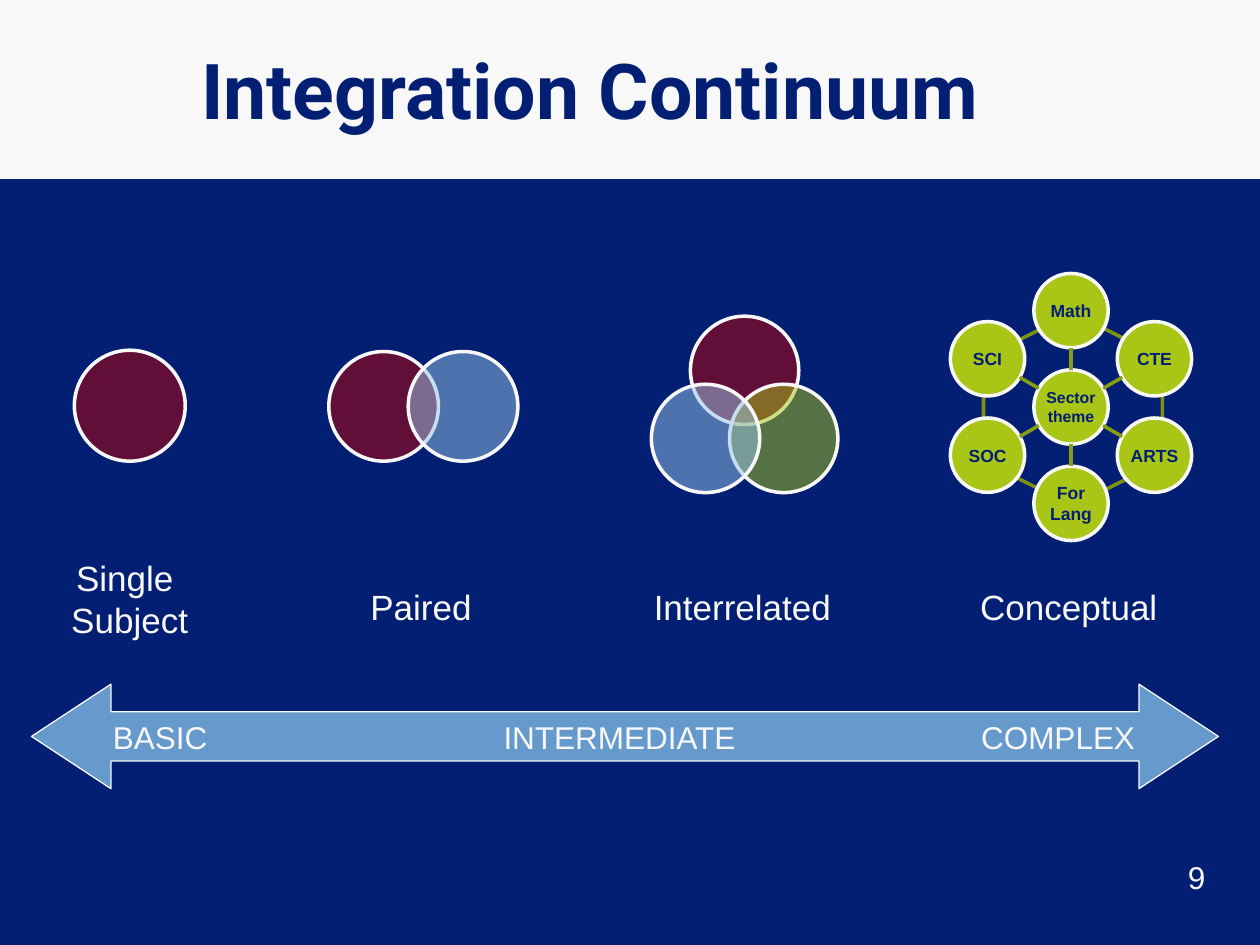
import math
from dataclasses import dataclass

import pptx
import pptx.dml.color
import pptx.enum.shapes
import pptx.enum.text
import pptx.oxml
import pptx.oxml.ns
import pptx.util
from pptx.util import Inches


@dataclass(frozen=True)
class Theme:
    navy: str = "031F73"
    white: str = "F8F8F8"
    red: str = "C00000"
    sky: str = "98C6EA"
    lime: str = "A9C516"
    olive: str = "7D9210"
    spoke: str = "879E12"
    arrow: str = "6699CC"
    title_size: int = 44
    label_size: int = 20
    scale_size: int = 18
    node_size: int = 10
    hub_size: int = 9


theme = Theme()
rgb = pptx.dml.color.RGBColor.from_string
shapes_enum = pptx.enum.shapes.MSO_SHAPE
align = pptx.enum.text.PP_ALIGN
anchor = pptx.enum.text.MSO_ANCHOR

deck = pptx.Presentation()
deck.slide_width, deck.slide_height = Inches(10), Inches(7.5)
page = deck.slides.add_slide(deck.slide_layouts[6])
page.background.fill.solid()
page.background.fill.fore_color.rgb = rgb(theme.navy)


def add_figure(kind, area, fill=None, line=None, width=2, alpha=None):
    """Add a preset shape; alpha is the fill's opacity in percent."""
    figure = page.shapes.add_shape(kind, *map(Inches, area))
    figure.shadow.inherit = False
    if fill:
        figure.fill.solid()
        figure.fill.fore_color.rgb = rgb(fill)
    else:
        figure.fill.background()
    if alpha:
        color = figure.fill._xPr.find(".//" + pptx.oxml.ns.qn("a:srgbClr"))
        opacity = pptx.oxml.parse_xml(
            f'<a:alpha {pptx.oxml.ns.nsdecls("a")} val="{alpha * 1000}"/>')
        color.append(opacity)
    if line:
        figure.line.color.rgb = rgb(line)
        figure.line.width = pptx.util.Pt(width)
    else:
        figure.line.fill.background()
    return figure


def write(shape, lines, size, color, name="Arial", bold=False,
          alignment=align.LEFT, **frame_format):
    """Fill a shape with one paragraph a line."""
    frame = shape.text_frame
    for key, value in frame_format.items():
        setattr(frame, key, value)
    for index, line in enumerate(lines):
        para = frame.add_paragraph() if index else frame.paragraphs[0]
        para.alignment = alignment
        span = para.add_run()
        span.text = line
        span.font.color.rgb = rgb(color)
        for key, value in {"name": name, "size": pptx.util.Pt(size), "bold": bold}.items():
            setattr(span.font, key, value)


# Title band
add_figure(shapes_enum.RECTANGLE, (0, 0, 10, 1.42), theme.white)
title = page.shapes.add_textbox(Inches(1.5), Inches(0.08), Inches(8.5), Inches(1.25))
write(title, ["Integration Continuum"], theme.title_size, theme.navy, "Roboto", True,
      word_wrap=True, vertical_anchor=anchor.MIDDLE)

# Overlapping subjects: left, top, diameter, colour
subjects = [
    (0.59, 2.78, 0.88, theme.red),
    (2.61, 2.79, 0.87, theme.red),
    (3.24, 2.79, 0.87, theme.sky),
    (5.48, 2.51, 0.86, theme.red),
    (5.79, 3.05, 0.86, theme.lime),
    (5.17, 3.05, 0.86, theme.sky),
]
for left, top, diameter, color in subjects:
    add_figure(shapes_enum.OVAL, (left, top, diameter, diameter), color, theme.white, alpha=50)

# Double arrow, with its three stages set by tab stops
arrow = add_figure(shapes_enum.LEFT_RIGHT_ARROW, (0.25, 5.43, 9.42, 0.83),
                   theme.arrow, theme.white, 0.75)
arrow.adjustments[0], arrow.adjustments[1] = 0.47, 0.76
stage_para = arrow.text_frame.paragraphs[0]
tabs = pptx.oxml.parse_xml(
    f'<a:tabLst {pptx.oxml.ns.nsdecls("a")}>'
    + "".join(f'<a:tab pos="{Inches(stop)}" algn="l"/>' for stop in (3.1, 6.89))
    + "</a:tabLst>")
stage_para._p.get_or_add_pPr().append(tabs)
write(arrow, ["BASIC\tINTERMEDIATE\tCOMPLEX"], theme.scale_size, theme.white,
      word_wrap=True, vertical_anchor=anchor.MIDDLE,
      margin_left=Inches(0.35), margin_right=0)

# Conceptual wheel: six nodes on a ring around the hub
center_x, center_y = 8.5, 3.23
ring, node = 0.765, 0.59
outline = add_figure(shapes_enum.HEXAGON, (7.75, 2.54, 1.53, 1.42), line=theme.olive)
outline.rotation = 90
nodes = [(["Sector theme"], 0, 0, theme.hub_size)]
spokes = []
for index, lines in enumerate((["Math"], ["CTE"], ["ARTS"], ["For", "Lang"], ["SOC"], ["SCI"])):
    angle = math.radians(60 * index - 90)
    across, down = math.cos(angle), math.sin(angle)
    nodes.append((lines, ring * across, ring * down, theme.node_size))
    spokes.append((across, down))
for lines, shift_x, shift_y, size in nodes:
    circle = add_figure(
        shapes_enum.OVAL,
        (center_x + shift_x - node / 2, center_y + shift_y - node / 2, node, node),
        theme.lime, theme.white)
    write(circle, lines, size, theme.navy, bold=True, alignment=align.CENTER,
          word_wrap=True, vertical_anchor=anchor.MIDDLE,
          margin_left=0, margin_right=0, margin_top=0, margin_bottom=0)
for across, down in spokes:
    ends = [Inches(center + reach * step)
            for reach in (node / 2, ring - node / 2)
            for center, step in ((center_x, across), (center_y, down))]
    spoke = page.shapes.add_connector(pptx.enum.shapes.MSO_CONNECTOR.STRAIGHT, *ends)
    spoke.line.color.rgb = rgb(theme.spoke)
    spoke.line.width = pptx.util.Pt(2)
    spoke._element.spPr.append(
        pptx.oxml.parse_xml(f'<a:effectLst {pptx.oxml.ns.nsdecls("a")}/>'))

# Captions and page number
captions = [
    (["Single ", "Subject"], (0.46, 4.37, 1.14, 0.77), theme.label_size, align.CENTER, False),
    (["Paired"], (2.84, 4.6, 1.01, 0.44), theme.label_size, align.LEFT, False),
    (["Interrelated"], (5.09, 4.6, 1.62, 0.44), theme.label_size, align.LEFT, False),
    (["Conceptual"], (7.68, 4.6, 1.62, 0.44), theme.label_size, align.LEFT, False),
    (["9"], (9.33, 6.76, 0.67, 0.5), theme.scale_size, align.LEFT, True),
]
for lines, area, size, alignment, wrap in captions:
    box = page.shapes.add_textbox(*map(Inches, area))
    write(box, lines, size, theme.white, alignment=alignment, word_wrap=wrap)

deck.save("out.pptx")
